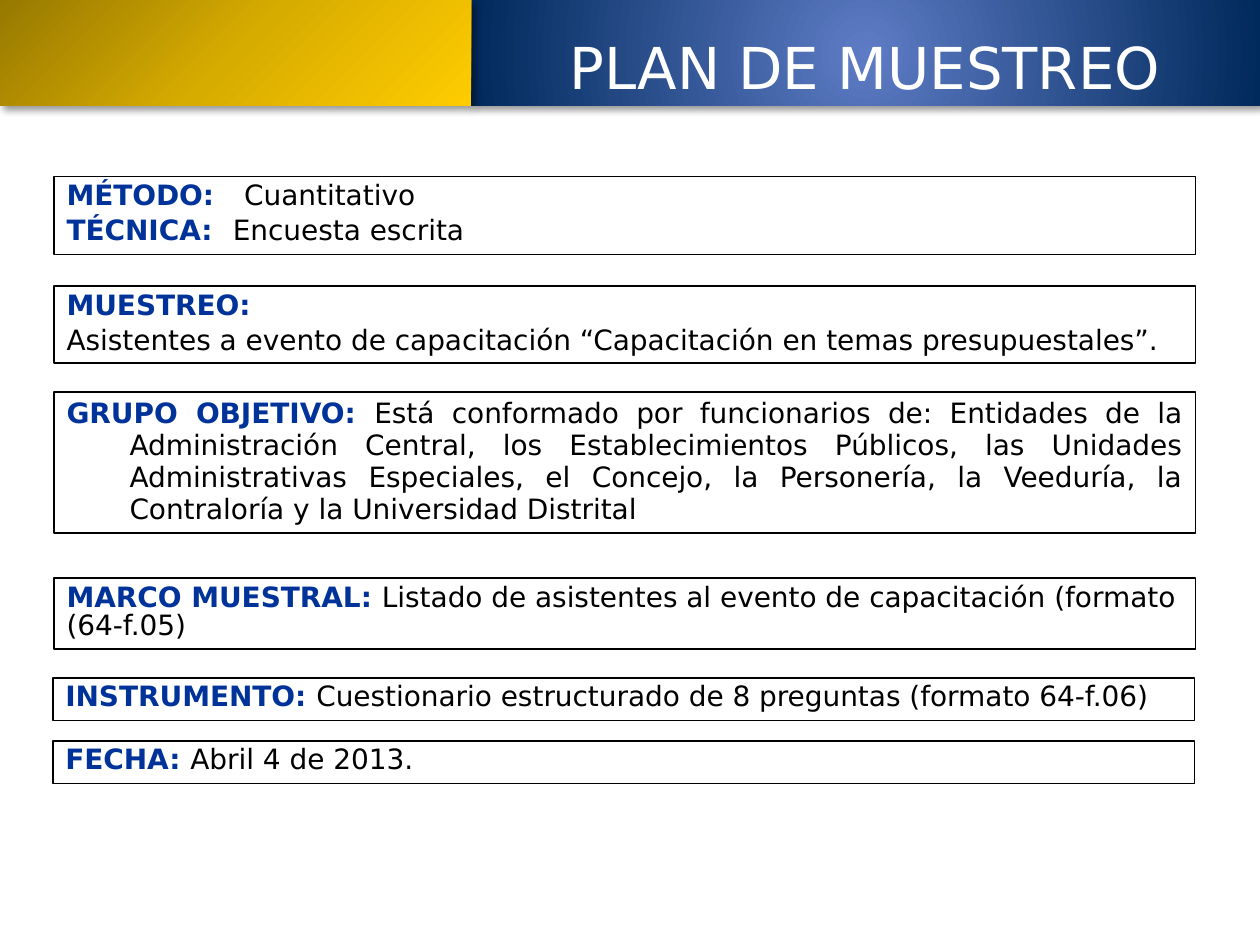
from lxml import etree
from pptx import Presentation
from pptx.dml.color import RGBColor
from pptx.enum.shapes import MSO_SHAPE
from pptx.enum.text import MSO_ANCHOR, PP_ALIGN
from pptx.oxml import parse_xml
from pptx.oxml.ns import nsdecls, qn
from pptx.util import Inches, Pt

RECT = MSO_SHAPE.RECTANGLE
TOP = MSO_ANCHOR.TOP
LEFT, CENTER, JUSTIFY = PP_ALIGN.LEFT, PP_ALIGN.CENTER, PP_ALIGN.JUSTIFY
FONT = "DejaVu Sans"
WHITE, BLACK, BLUE = "FFFFFF", "000000", "003399"

TITLE = "PLAN DE MUESTREO"

# Header bands: left, width, colour stops, focus (left, top, right, bottom in %)
BANDS = [
    (3.74, 6.26, [(0, "5E7CC5"), (100, "00295C")], (50, 50, 50, 50)),
    (0, 3.74, [(0, "977900"), (50, "D7AC00"), (100, "FFCC00")], (0, 0, 100, 100)),
]

# Boxes: left, top, height, line spacing, hanging indent, paragraphs
# Paragraph: label, value, tab stop between them (None for plain flow)
BOXES = [
    (0.43, 1.4, 0.62, 0.85, 0, [("MÉTODO:", "Cuantitativo", 1.41),
                                ("TÉCNICA:", "Encuesta escrita", 1.32)]),
    (0.43, 2.27, 0.61, 0.85, 0, [
        ("MUESTREO:", "", None),
        ("", "Asistentes a evento de capacitación “Capacitación en temas "
             "presupuestales”.", None)]),
    (0.43, 3.11, 1.12, 0.95, 0.5, [
        ("GRUPO OBJETIVO: ",
         "Está conformado por funcionarios de: Entidades de la Administración "
         "Central, los Establecimientos Públicos, las Unidades Administrativas "
         "Especiales, el Concejo, la Personería, la Veeduría, la Contraloría y "
         "la Universidad Distrital", None)]),
    (0.43, 4.59, 0.56, 0.85, 0, [
        ("MARCO MUESTRAL: ",
         "Listado de asistentes al evento de capacitación (formato (64-f.05)", None)]),
    (0.42, 5.38, 0.34, 0.85, 0, [
        ("INSTRUMENTO: ",
         "Cuestionario estructurado de 8 preguntas (formato 64-f.06)", None)]),
    (0.42, 5.88, 0.34, 0.85, 0, [("FECHA: ", "Abril 4 de 2013.", None)]),
]
BOX_W, BAND_H = 9.06, 0.84


def color(code):
    return RGBColor.from_string(code)


def style(run, size, code, bold=False):
    font = run.font
    font.name, font.size, font.bold = FONT, Pt(size), bold
    font.color.rgb = color(code)


def add_rect(slide, left, top, width, height):
    shape = slide.shapes.add_shape(
        RECT, Inches(left), Inches(top), Inches(width), Inches(height))
    shape.shadow.inherit = False
    return shape


def add_band(slide, left, width, stops, focus):
    band = add_rect(slide, left, 0, width, BAND_H)
    band.line.fill.background()
    marks = "".join(f'<a:gs pos="{pos * 1000}"><a:srgbClr val="{code}"/></a:gs>'
                    for pos, code in stops)
    l, t, r, b = (1000 * side for side in focus)
    props = band.fill._xPr
    geom = props.find(qn("a:prstGeom"))
    geom.addnext(parse_xml(
        f'<a:gradFill {nsdecls("a")} rotWithShape="1"><a:gsLst>{marks}</a:gsLst>'
        f'<a:path path="circle"><a:fillToRect l="{l}" t="{t}" r="{r}" b="{b}"/>'
        '</a:path></a:gradFill>'))
    # Soft shadow below and to the right
    props.find(qn("a:effectLst")).append(parse_xml(
        f'<a:outerShdw {nsdecls("a")} blurRad="{Pt(4)}" dist="{Pt(3)}" '
        'dir="2700000" algn="tl" rotWithShape="0"><a:srgbClr val="000000">'
        '<a:alpha val="40000"/></a:srgbClr></a:outerShdw>'))


def add_tab(para, stop):
    tabs = etree.SubElement(para._p.get_or_add_pPr(), qn("a:tabLst"))
    etree.SubElement(tabs, qn("a:tab"), pos=str(Inches(stop)), algn="l")


def add_box(slide, left, top, height, spacing, hang, paras):
    box = add_rect(slide, left, top, BOX_W, height)
    box.fill.background()
    box.line.color.rgb = color(BLACK)
    box.line.width = Pt(1)
    frame = box.text_frame
    frame.word_wrap = True
    frame.vertical_anchor = TOP
    for i, (label, value, stop) in enumerate(paras):
        para = frame.add_paragraph() if i else frame.paragraphs[0]
        para.alignment = JUSTIFY if hang else LEFT
        para.line_spacing = spacing
        if i:
            para.space_before = Pt(4)
        if hang:
            props = para._p.get_or_add_pPr()
            props.set("marL", str(Inches(hang)))
            props.set("indent", str(-Inches(hang)))
        if stop:
            add_tab(para, stop)
            label += "\t"
        for text, code, bold in ((label, BLUE, True), (value, BLACK, False)):
            if text:
                run = para.add_run()
                run.text = text
                style(run, 16, code, bold)


def add_title(slide):
    box = slide.shapes.add_textbox(
        Inches(3.83), Inches(0.17), Inches(6.07), Inches(0.5))
    frame = box.text_frame
    frame.word_wrap = True
    frame.margin_top = Inches(0.08)
    frame.text = TITLE
    para = frame.paragraphs[0]
    para.alignment = CENTER
    style(para.runs[0], 33, WHITE)


def main():
    deck = Presentation()
    deck.slide_width, deck.slide_height = Inches(10), Inches(7.5)
    slide = deck.slides.add_slide(deck.slide_layouts[6])
    for band in BANDS:
        add_band(slide, *band)
    add_title(slide)
    for box in BOXES:
        add_box(slide, *box)
    deck.save("out.pptx")


if __name__ == "__main__":
    main()
